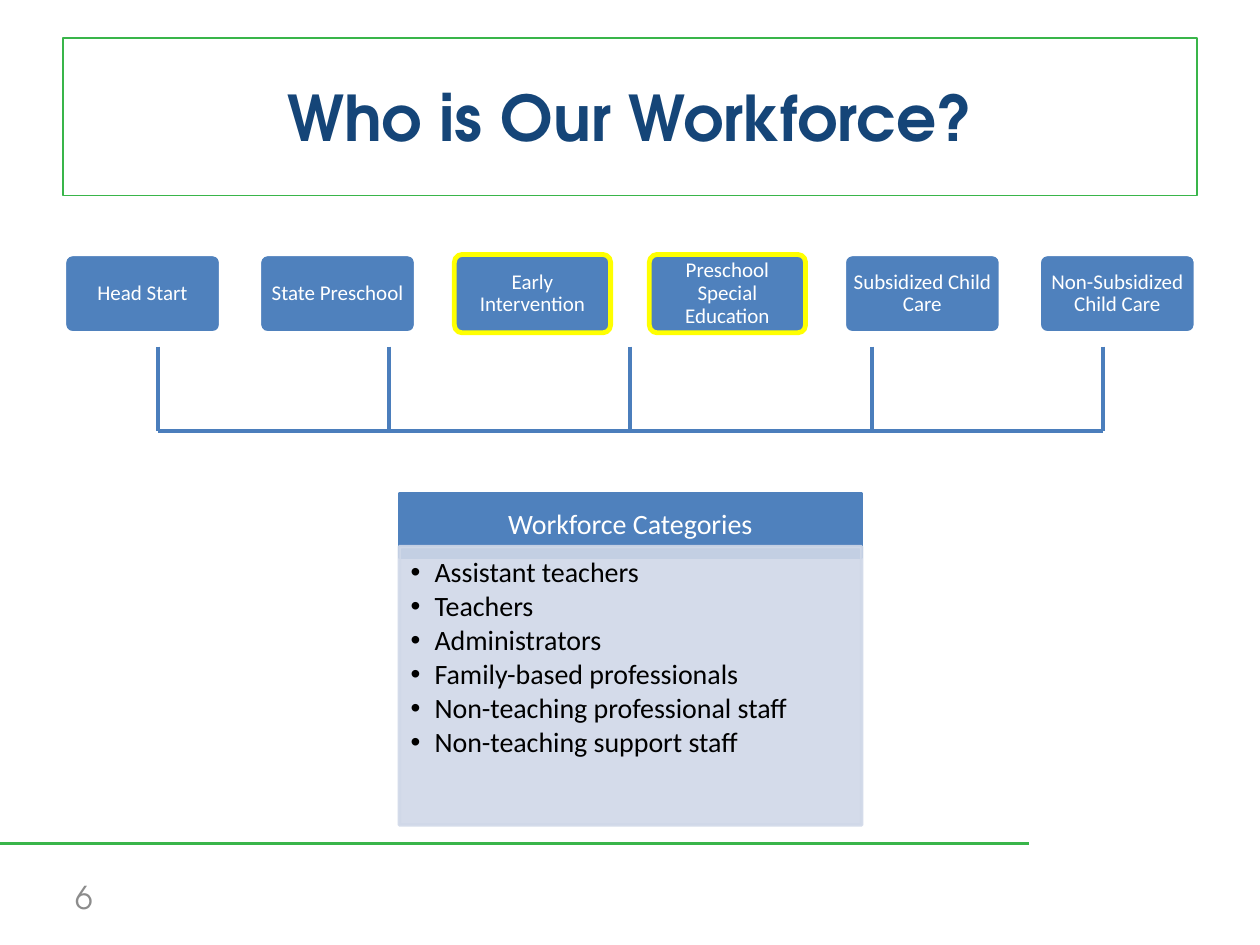
from lxml.etree import SubElement
from pptx import Presentation
from pptx.dml.color import RGBColor
from pptx.enum.shapes import MSO_CONNECTOR, MSO_SHAPE
from pptx.enum.text import MSO_ANCHOR, MSO_AUTO_SIZE, PP_ALIGN
from pptx.oxml.ns import qn
from pptx.util import Cm, Pt

WHITE = RGBColor(0xFF, 0xFF, 0xFF)
BLACK = RGBColor(0, 0, 0)
GREEN = RGBColor(0x39, 0xB5, 0x4A)
NAVY = RGBColor(0x15, 0x45, 0x78)
GRAY = RGBColor(0x8C, 0x8C, 0x8C)
BLUE = RGBColor(0x4F, 0x81, 0xBD)
BRACKET_BLUE = RGBColor(0x4B, 0x7E, 0xBC)
PALE_BLUE = RGBColor(0xD0, 0xD8, 0xE8)
YELLOW = RGBColor(0xFF, 0xFF, 0)

HEADING_FONT = "TeX Gyre Adventor"
BODY_FONT = "Calibri"

PROGRAMS = ["Head Start", "State Preschool", "Early Intervention",
            "Preschool Special Education", "Subsidized Child Care",
            "Non-Subsidized Child Care"]
HIGHLIGHTED = {"Early Intervention", "Preschool Special Education"}
CATEGORIES = ["Assistant teachers", "Teachers", "Administrators",
              "Family-based professionals", "Non-teaching professional staff",
              "Non-teaching support staff"]


class SlideBuilder:
    """Holds the slide and draws its elements in one style; lengths in cm."""

    def __init__(self, slide):
        self.slide = slide

    def place(self, shape, left, top, width, height):
        shape.left, shape.top = Cm(left), Cm(top)
        shape.width, shape.height = Cm(width), Cm(height)

    def outline(self, shape, color, width):
        shape.line.color.rgb = color
        shape.line.width = Pt(width)

    def set_text(self, shape, text, size, color, font=BODY_FONT, bold=False,
                 align=PP_ALIGN.CENTER, anchor=MSO_ANCHOR.MIDDLE,
                 margins=None, line_spacing=0.9):
        frame = shape.text_frame
        frame.text = text
        frame.word_wrap = True
        frame.auto_size = MSO_AUTO_SIZE.NONE
        frame.vertical_anchor = anchor
        if margins:
            (frame.margin_left, frame.margin_top,
             frame.margin_right, frame.margin_bottom) = map(Cm, margins)
        for paragraph in frame.paragraphs:
            paragraph.alignment = align
            paragraph.line_spacing = line_spacing
            paragraph.space_before = Pt(0)
            for run in paragraph.runs:
                run.font.name = font
                run.font.size = Pt(size)
                run.font.bold = bold
                run.font.color.rgb = color

    def title(self, text, *box):
        shape = self.slide.shapes.title
        self.place(shape, *box)
        self.outline(shape, GREEN, 1)
        self.set_text(shape, text, 36, NAVY, HEADING_FONT, bold=True,
                      line_spacing=1)

    def line(self, x1, y1, x2, y2, color, width):
        connector = self.slide.shapes.add_connector(
            MSO_CONNECTOR.STRAIGHT, Cm(x1), Cm(y1), Cm(x2), Cm(y2))
        self.outline(connector, color, width)
        SubElement(connector.element.spPr, qn("a:effectLst"))

    def box(self, kind, text, size, border, border_width, margins, *box):
        shape = self.slide.shapes.add_shape(kind, *map(Cm, box))
        shape.shadow.inherit = False
        shape.fill.solid()
        shape.fill.fore_color.rgb = BLUE
        self.outline(shape, border, border_width)
        self.set_text(shape, text, size, WHITE, margins=margins)
        return shape

    def list_panel(self, items, *box):
        shape = self.slide.placeholders[1]
        self.place(shape, *box)
        shape.fill.solid()
        shape.fill.fore_color.rgb = PALE_BLUE
        self.outline(shape, PALE_BLUE, 2)
        for color in shape.element.spPr.iter(qn("a:srgbClr")):
            SubElement(color, qn("a:alpha"), val="90000")
        self.set_text(shape, "\n".join(items), 16, BLACK, align=PP_ALIGN.LEFT,
                      anchor=MSO_ANCHOR.TOP, margins=(0.23, 0.23, 0.3, 0.36))
        for paragraph in shape.text_frame.paragraphs:
            paragraph.space_after = Pt(2.2)
            properties = paragraph._p.get_or_add_pPr()
            properties.set("marL", str(Cm(0.48)))
            properties.set("indent", str(Cm(-0.48)))
        # Bring the panel in front of the header it overlaps
        self.slide.shapes.element.append(shape.element)

    def page_number(self, text, *box):
        shape = self.slide.shapes.add_textbox(*map(Cm, box))
        self.set_text(shape, text, 18, GRAY, HEADING_FONT,
                      align=PP_ALIGN.LEFT, line_spacing=1)


def main():
    presentation = Presentation()
    presentation.slide_width, presentation.slide_height = Cm(25.4), Cm(19.05)
    builder = SlideBuilder(
        presentation.slides.add_slide(presentation.slide_layouts[1]))

    # Footer and title
    builder.line(0, 17, 20.75, 17, GREEN, 1.5)
    builder.page_number("6", 1.27, 17.58, 5.92, 1.02)
    builder.title("Who is Our Workforce?", 1.27, 0.76, 22.86, 3.18)

    # Row of programs
    for index, program in enumerate(PROGRAMS):
        border, width = (YELLOW, 2.75) if program in HIGHLIGHTED else (WHITE, 2)
        shape = builder.box(MSO_SHAPE.ROUNDED_RECTANGLE, program, 12, border, width,
                            (0.1, 0.08, 0.1, 0.08),
                            1.3 + 3.93 * index, 5.13, 3.15, 1.58)
        shape.adjustments[0] = 0.1

    # Bracket below the programs
    bracket_top, bracket_bottom = 6.99, 8.69
    stems = [3.18, 7.84, 12.7, 17.58, 22.23]
    for x in stems:
        builder.line(x, bracket_top, x, bracket_bottom, BRACKET_BLUE, 2)
    builder.line(stems[0], bracket_bottom, stems[-1], bracket_bottom,
                 BRACKET_BLUE, 2)

    # Workforce categories
    builder.box(MSO_SHAPE.RECTANGLE, "Workforce Categories", 16, BLUE, 2,
                (0.3, 0.18, 0.3, 0.18), 8.05, 9.96, 9.32, 1.27)
    builder.list_panel(CATEGORIES, 8.05, 11.02, 9.32, 5.61)

    presentation.save("out.pptx")


if __name__ == "__main__":
    main()
